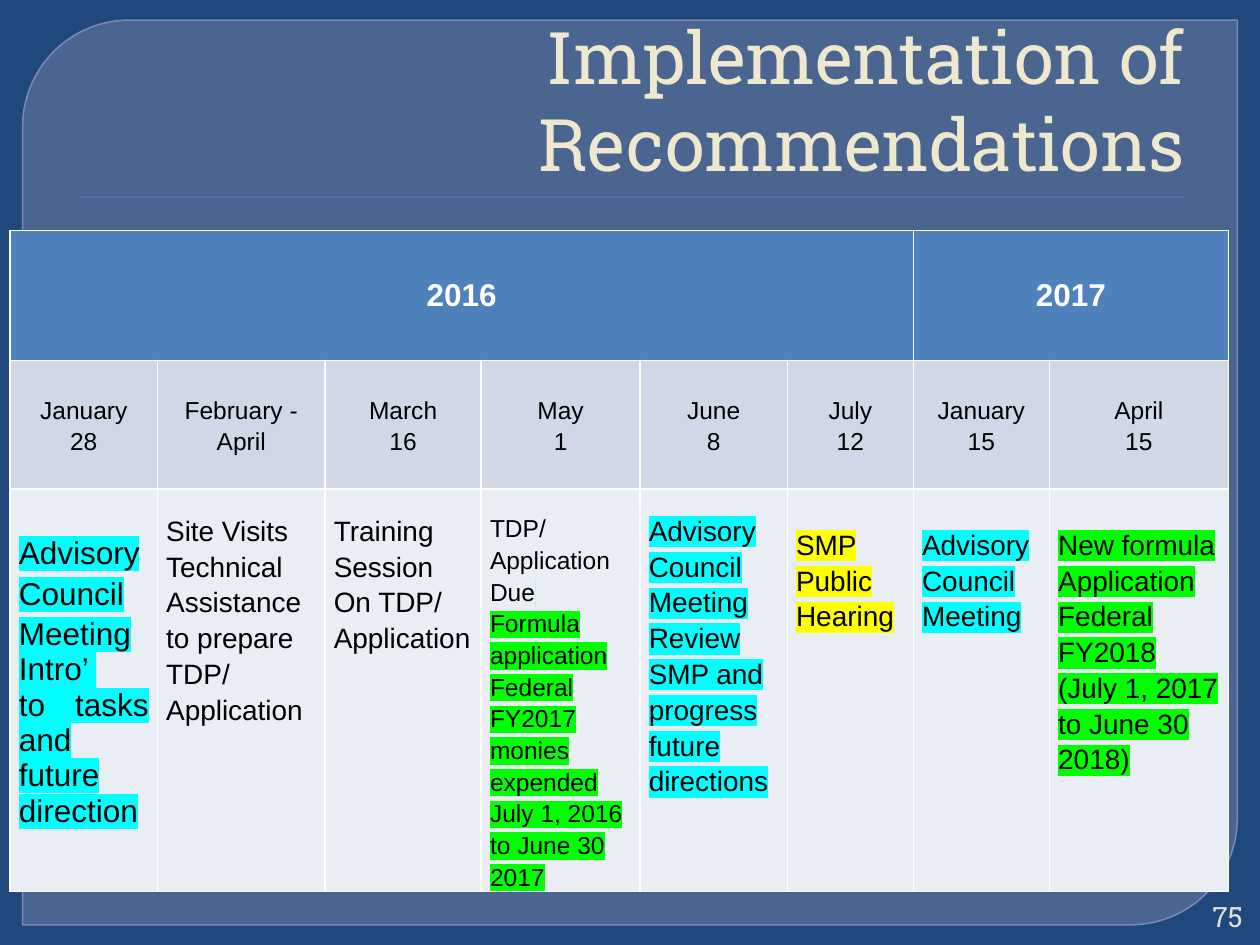
from lxml import etree
from pptx import Presentation
from pptx.dml.color import RGBColor
from pptx.enum.shapes import MSO_SHAPE as SHAPE
from pptx.enum.text import MSO_ANCHOR as ANCHOR, PP_ALIGN as ALIGN
from pptx.oxml.ns import qn
from pptx.util import Inches, Pt

NAVY = RGBColor(0x1F, 0x49, 0x7D)
PANEL = RGBColor(0x63, 0x75, 0x9D)
PANEL_EDGE = RGBColor(0x79, 0x89, 0xB3)
BLUE = RGBColor(0x4F, 0x81, 0xBD)
CREAM = RGBColor(0xED, 0xE8, 0xCE)
PALE = RGBColor(0xE3, 0xE1, 0xD7)
DATE_FILL = RGBColor(0xD0, 0xD8, 0xE8)
TASK_FILL = RGBColor(0xE9, 0xED, 0xF4)
WHITE = RGBColor(0xFF, 0xFF, 0xFF)
BLACK = RGBColor(0x00, 0x00, 0x00)
CYAN = RGBColor(0x00, 0xFF, 0xFF)
GREEN = RGBColor(0x00, 0xFF, 0x00)
YELLOW = RGBColor(0xFF, 0xFF, 0x00)


def add_run(paragraph, text, size, color, font="Arial", bold=False, highlight=None):
    run = paragraph.add_run()
    run.text = text
    run.font.size = Pt(size)
    run.font.bold = bold
    run.font.color.rgb = color
    if highlight is not None:
        mark = etree.SubElement(run.font._element, qn("a:highlight"))
        etree.SubElement(mark, qn("a:srgbClr"), val=str(highlight))
    run.font.name = font


def set_cell(cell, fill, anchor, top=0):
    cell.fill.solid()
    cell.fill.fore_color.rgb = fill
    cell.vertical_anchor = anchor
    cell.margin_left = cell.margin_right = Inches(0.07)
    cell.margin_top, cell.margin_bottom = top, 0
    return cell.text_frame


prs = Presentation()
prs.slide_width, prs.slide_height = Inches(10), Inches(7.5)
slide = prs.slides.add_slide(prs.slide_layouts[5])
slide.background.fill.solid()
slide.background.fill.fore_color.rgb = NAVY

# Backdrop panel and the rule under the title
panel = slide.shapes.add_shape(
    SHAPE.ROUND_2_DIAG_RECTANGLE, Inches(0.18), Inches(0.16), Inches(9.64), Inches(7.18))
panel.adjustments[0] = 0.118
panel.shadow.inherit = False
panel.fill.solid()
panel.fill.fore_color.rgb = PANEL
panel_color = panel._element.spPr.find(qn("a:solidFill"))[0]
etree.SubElement(panel_color, qn("a:alpha"), val="65000")
panel.line.color.rgb = PANEL_EDGE
panel.line.width = Pt(0.87)

rule = slide.shapes.add_shape(
    SHAPE.RECTANGLE, Inches(0.64), Inches(1.56), Inches(8.75), Inches(0.01))
rule.shadow.inherit = False
rule.fill.solid()
rule.fill.fore_color.rgb = BLUE
rule.line.fill.background()

# Title, brought in front of the panel
title = slide.shapes.title
slide.shapes._spTree.append(title._element)
title.left, title.top, title.width, title.height = (
    Inches(0.5), Inches(0.28), Inches(9), Inches(1.25))
title.text_frame.vertical_anchor = ANCHOR.BOTTOM
heading = title.text_frame.paragraphs[0]
heading.alignment = ALIGN.RIGHT
add_run(heading, "Implementation of Recommendations", 41.4, CREAM, "Roboto Slab")

# Timeline table
widths = [1.17, 1.33, 1.24, 1.26, 1.17, 1, 1.08, 1.42]
heights = [1.03, 1.02, 3.17]
timeline = slide.shapes.add_table(
    3, len(widths), Inches(0.08), Inches(1.83),
    Inches(sum(widths)), Inches(sum(heights))).table
for column, width in zip(timeline.columns, widths):
    column.width = Inches(width)
for row, height in zip(timeline.rows, heights):
    row.height = Inches(height)

# Years
for year, first, last in [("2016", 0, 5), ("2017", 6, 7)]:
    timeline.cell(0, first).merge(timeline.cell(0, last))
    frame = set_cell(timeline.cell(0, first), BLUE, ANCHOR.MIDDLE)
    frame.paragraphs[0].alignment = ALIGN.CENTER
    add_run(frame.paragraphs[0], year, 18, WHITE, bold=True)

# Dates
dates = [["January", "28"], ["February - April"], ["March", "16"], ["May", "1"],
         ["June", "8"], ["July", "12"], ["January", "15"], ["April", "15"]]
for col, lines in enumerate(dates):
    frame = set_cell(timeline.cell(1, col), DATE_FILL, ANCHOR.MIDDLE)
    for i, line in enumerate(lines):
        paragraph = frame.paragraphs[0] if i == 0 else frame.add_paragraph()
        paragraph.alignment = ALIGN.CENTER
        paragraph.line_spacing = 1.15
        add_run(paragraph, line, 14, BLACK)

# Tasks: space above in points, text size, then paragraphs of (text, highlight) runs
tasks = [
    (24, 18, [[("Advisory Council Meeting", CYAN)], [("Intro’ ", CYAN)],
              [("to tasks and future direction", CYAN)]]),
    (13, 16, [[("Site Visits", None)], [("Technical Assistance", None)],
              [("to prepare TDP/", None)], [("Application", None)]]),
    (13, 16, [[("Training", None)], [("Session", None)], [("On TDP/", None)],
              [("Application", None)]]),
    (13, 14, [[("TDP/", None)], [("Application", None)],
              [("Due", None), (" Formula application", GREEN)],
              [("Federal FY2017 monies expended July 1, 2016 to June 30 2017", GREEN)]]),
    (13, 16, [[("Advisory Council Meeting", CYAN)],
              [("Review SMP and progress future directions", CYAN)]]),
    (21, 16, [[("SMP Public Hearing", YELLOW)]]),
    (21, 16, [[("Advisory Council", CYAN)], [("Meeting", CYAN)]]),
    (21, 16, [[("New formula", GREEN)],
              [("Application Federal FY2018 (July 1, 2017 to June 30 2018)", GREEN)]]),
]
for col, (space, size, paragraphs) in enumerate(tasks):
    frame = set_cell(timeline.cell(2, col), TASK_FILL, ANCHOR.TOP, Pt(space))
    for i, runs in enumerate(paragraphs):
        paragraph = frame.paragraphs[0] if i == 0 else frame.add_paragraph()
        justified = col == 0 and i > 0
        paragraph.alignment = ALIGN.JUSTIFY if justified else ALIGN.LEFT
        paragraph.line_spacing = 1.0 if justified else 1.15
        for text, highlight in runs:
            add_run(paragraph, text, size, BLACK, highlight=highlight)

# Page number
page = slide.shapes.add_textbox(Inches(9.45), Inches(7.12), Inches(0.51), Inches(0.3))
page.text_frame.word_wrap = True
page.text_frame.vertical_anchor = ANCHOR.MIDDLE
page.text_frame.paragraphs[0].alignment = ALIGN.RIGHT
add_run(page.text_frame.paragraphs[0], "75", 16, PALE, "Roboto Slab")

prs.save("out.pptx")
